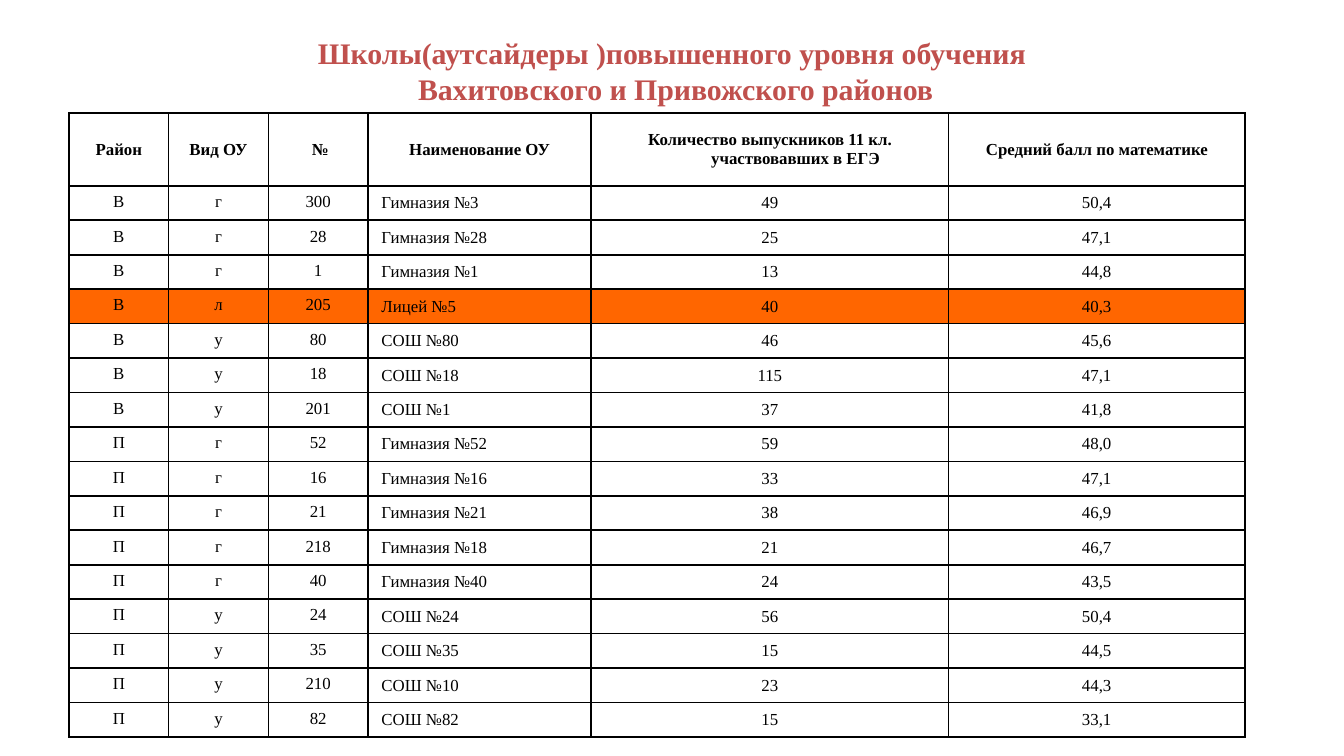
from pptx import Presentation
from pptx.dml.color import RGBColor
from pptx.enum.text import MSO_ANCHOR as Anchor, MSO_AUTO_SIZE as AutoSize, PP_ALIGN as Align
from pptx.oxml import parse_xml
from pptx.oxml.ns import nsdecls
from pptx.util import Inches, Pt

TITLE = ["Школы(аутсайдеры )повышенного уровня обучения",
         " Вахитовского и Привожского районов"]
HEADER = ["Район", "Вид ОУ", " №", "Наименование ОУ",
          "Количество выпускников 11 кл. участвовавших в ЕГЭ", "Средний балл по математике"]
SCHOOLS = [
    ("В", "г", "300", "Гимназия №3", "49", "50,4"),
    ("В", "г", "28", "Гимназия №28", "25", "47,1"),
    ("В", "г", "1", "Гимназия №1", "13", "44,8"),
    ("В", "л", "205", "Лицей №5", "40", "40,3"),
    ("В", "у", "80", "СОШ №80", "46", "45,6"),
    ("В", "у", "18", "СОШ №18", "115", "47,1"),
    ("В", "у", "201", "СОШ №1", "37", "41,8"),
    ("П", "г", "52", "Гимназия №52", "59", "48,0"),
    ("П", "г", "16", "Гимназия №16", "33", "47,1"),
    ("П", "г", "21", "Гимназия №21", "38", "46,9"),
    ("П", "г", "218", "Гимназия №18", "21", "46,7"),
    ("П", "г", "40", "Гимназия №40", "24", "43,5"),
    ("П", "у", "24", "СОШ №24", "56", "50,4"),
    ("П", "у", "35", "СОШ №35", "15", "44,5"),
    ("П", "у", "210", "СОШ №10", "23", "44,3"),
    ("П", "у", "82", "СОШ №82", "15", "33,1"),
]
COLUMN_WIDTHS = [7.42, 7.42, 7.42, 16.6, 26.6, 22.04]
HEADER_HEIGHT = 5.4
NAME_COLUMN = 3


def color(value):
    return RGBColor.from_string(value)


def grid(units):
    """Length on a grid of 100 columns by 56.25 rows."""
    return Inches(units / 10)


class SlideBuilder:
    font = "Times New Roman"
    accent, ink, paper, highlight = "C0504D", "000000", "FFFFFF", "FF6600"
    title_size, table_size = 16, 9
    hanging = Inches(0.38)

    def __init__(self, page):
        self.page = page

    def span(self, para, text, size, shade, bold=False):
        run = para.add_run()
        run.text = text
        run.font.name, run.font.size, run.font.bold = self.font, Pt(size), bold
        run.font.color.rgb = color(shade)

    def title(self, lines, left, top, width, height):
        box = self.page.shapes.title
        box.left, box.top, box.width, box.height = map(grid, (left, top, width, height))
        frame = box.text_frame
        frame.word_wrap, frame.auto_size = True, AutoSize.NONE
        frame.vertical_anchor = Anchor.MIDDLE
        para = frame.paragraphs[0]
        para.alignment = Align.CENTER
        for index, line in enumerate(lines):
            if index:
                para.add_line_break()
            self.span(para, line, self.title_size, self.accent, bold=True)

    def borders(self, cell):
        properties = cell._tc.get_or_add_tcPr()
        for side in ("lnL", "lnR", "lnT", "lnB"):
            properties.append(parse_xml(
                f'<a:{side} {nsdecls("a")} w="{Pt(1)}"><a:solidFill>'
                f'<a:srgbClr val="{self.ink}"/></a:solidFill></a:{side}>'))

    def cell(self, cell, text, fill, align, anchor, bold):
        self.borders(cell)
        cell.fill.solid()
        cell.fill.fore_color.rgb = color(fill)
        cell.vertical_anchor = anchor
        para = cell.text_frame.paragraphs[0]
        para.alignment = align
        indents = para._p.get_or_add_pPr()
        indents.set("marL", str(self.hanging))
        indents.set("indent", str(-self.hanging))
        self.span(para, text, self.table_size, self.ink, bold)

    def table(self, header, records, left, top, width, height):
        rows = [header, *records]
        table = self.page.shapes.add_table(
            len(rows), len(header), *map(grid, (left, top, width, height))).table
        table.first_row = table.horz_banding = False
        for column, column_width in zip(table.columns, COLUMN_WIDTHS):
            column.width = grid(column_width)
        row_height = (height - HEADER_HEIGHT) / len(records)
        for r, values in enumerate(rows):
            is_header = r == 0
            table.rows[r].height = grid(HEADER_HEIGHT if is_header else row_height)
            # The only lyceum is highlighted
            fill = self.highlight if values[1] == "л" else self.paper
            for c, text in enumerate(values):
                left_aligned = c == NAME_COLUMN and not is_header
                middle = is_header or c >= NAME_COLUMN
                self.cell(table.cell(r, c), text, fill,
                          Align.LEFT if left_aligned else Align.CENTER,
                          Anchor.MIDDLE if middle else Anchor.TOP, is_header)


def main():
    deck = Presentation()
    deck.slide_width, deck.slide_height = grid(100), grid(56.25)
    builder = SlideBuilder(deck.slides.add_slide(deck.slide_layouts[5]))

    # Heading
    builder.title(TITLE, 5, 3.73, 90, 3.1)

    # School results
    builder.table(HEADER, SCHOOLS, 5.13, 8.43, sum(COLUMN_WIDTHS), 46.45)

    deck.save("out.pptx")


if __name__ == "__main__":
    main()
